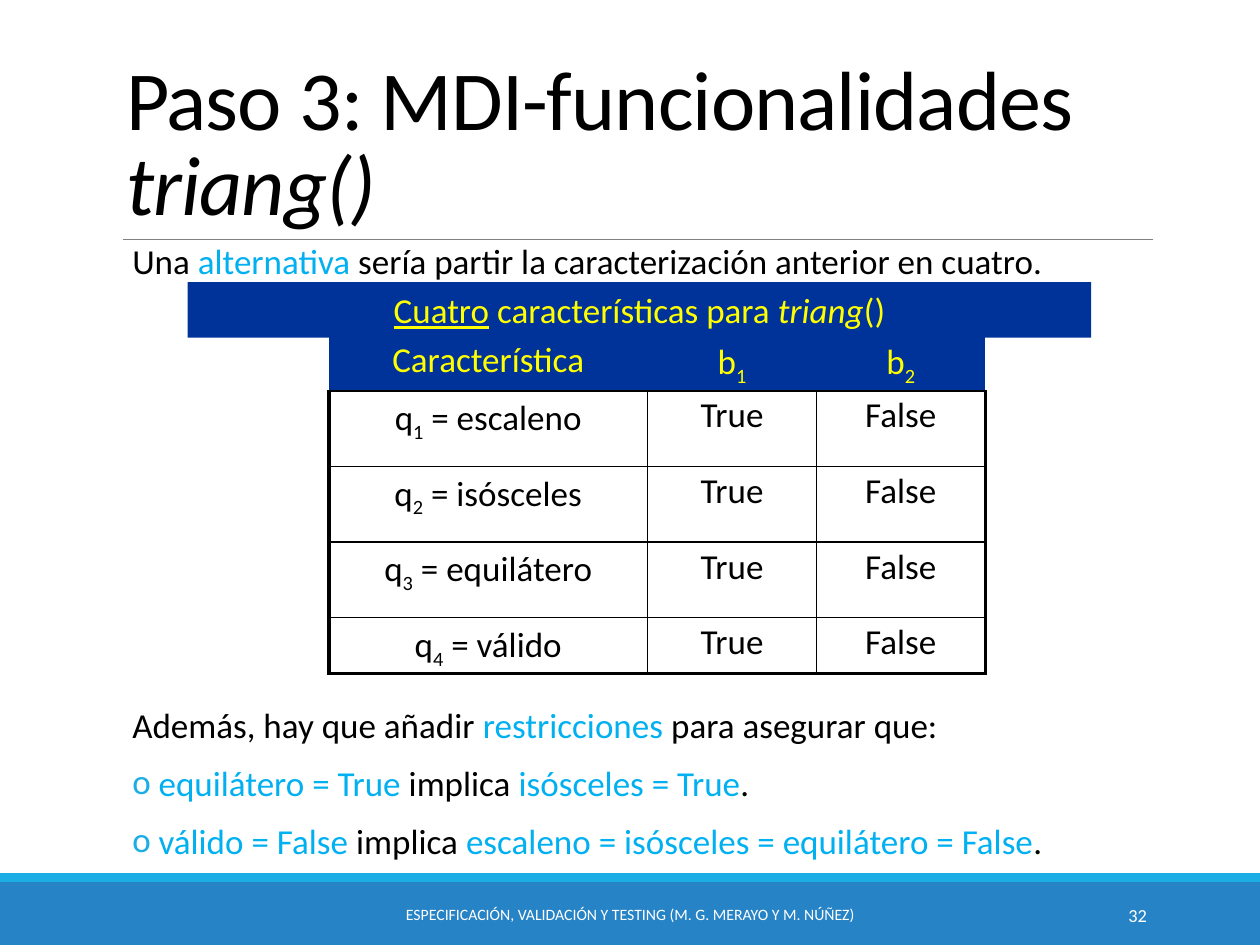
import pptx
import pptx.util
import pptx.dml.color
import pptx.enum.shapes
import pptx.enum.text
import pptx.oxml.ns
import lxml.etree

Inches = pptx.util.Inches
Pt = pptx.util.Pt
ALIGN = pptx.enum.text.PP_ALIGN
ANCHOR = pptx.enum.text.MSO_ANCHOR
RECTANGLE = pptx.enum.shapes.MSO_SHAPE.RECTANGLE

COLORS = {
    "text": "000000",
    "accent": "00B0F0",
    "footer": "2683C6",
    "strip": "1CADE4",
    "rule": "808080",
    "header": "003399",
    "heading": "FFFF00",
    "white": "FFFFFF",
}


def rgb(name):
    return pptx.dml.color.RGBColor.from_string(COLORS[name])


def add_child(parent, tag, **attributes):
    return lxml.etree.SubElement(parent, pptx.oxml.ns.qn(tag), attributes)


def add_span(para, text, color="text", size=20, italic=None, underline=None, sub=False):
    span = para.add_run()
    span.text = text
    span.font.name = "Calibri"
    span.font.size = Pt(size)
    span.font.color.rgb = rgb(color)
    span.font.italic = italic
    span.font.underline = underline
    if sub:
        span.font._element.set("baseline", "-25000")
    return span


def add_textbox(page, box, side=0.1, anchor=ANCHOR.TOP):
    frame = page.shapes.add_textbox(*map(Inches, box)).text_frame
    frame.word_wrap = True
    frame.margin_left = frame.margin_right = Inches(side)
    frame.vertical_anchor = anchor
    return frame


def add_block(page, box, color):
    block = page.shapes.add_shape(RECTANGLE, *map(Inches, box))
    block.shadow.inherit = False
    block.fill.solid()
    block.fill.fore_color.rgb = rgb(color)
    block.line.fill.background()
    return block


def add_title(page, box):
    title = page.shapes.title
    title.left, title.top, title.width, title.height = map(Inches, box)
    frame = title.text_frame
    frame.word_wrap = True
    frame.auto_size = pptx.enum.text.MSO_AUTO_SIZE.NONE
    frame.vertical_anchor = ANCHOR.BOTTOM
    para = frame.paragraphs[0]
    para.alignment = ALIGN.LEFT
    para.line_spacing = 0.85
    for text, italic in [("Paso 3: MDI-funcionalidades ", None), ("triang()", True)]:
        span = add_span(para, text, size=48, italic=italic)
        span.font._element.set("spc", "-50")


def add_rule(page, left, right, top):
    rule = page.shapes.add_connector(
        pptx.enum.shapes.MSO_CONNECTOR.STRAIGHT,
        Inches(left), Inches(top), Inches(right), Inches(top))
    rule.line.color.rgb = rgb("rule")
    rule.line.width = Pt(0.5)
    add_child(rule._element.spPr, "a:effectLst")


def add_bullet(para):
    properties = para._p.get_or_add_pPr()
    properties.set("marL", str(Inches(0.1)))
    properties.set("indent", str(Inches(-0.1)))
    color = add_child(properties, "a:buClr")
    add_child(color, "a:srgbClr", val=COLORS["strip"])
    add_child(properties, "a:buFont", typeface="Calibri")
    add_child(properties, "a:buChar", char="o")


def add_body(page, box, lines):
    frame = add_textbox(page, box, side=0)
    for index, (bulleted, spans) in enumerate(lines):
        para = frame.add_paragraph() if index else frame.paragraphs[0]
        para.line_spacing = 0.8
        para.space_before = Pt(12 if index else 0)
        para.space_after = Pt(2)
        if bulleted:
            add_bullet(para)
        for text, color in spans:
            add_span(para, text, color)


def add_banner(page, box):
    banner = add_block(page, box, "header")
    para = banner.text_frame.paragraphs[0]
    para.alignment = ALIGN.CENTER
    add_span(para, "Cuatro", "heading", underline=True)
    add_span(para, " características para ", "heading")
    add_span(para, "triang", "heading", italic=True)
    add_span(para, "()", "heading")


def set_borders(cell, widths):
    properties = cell._tc.get_or_add_tcPr()
    for side, width in zip("LRTB", widths):
        line = add_child(properties, "a:ln" + side, w=str(Pt(width)))
        if width:
            fill = add_child(line, "a:solidFill")
            add_child(fill, "a:srgbClr", val=COLORS["text"])
        else:
            add_child(line, "a:noFill")


def add_features_table(page, box, column_widths, row_heights):
    names = ["escaleno", "isósceles", "equilátero", "válido"]
    rows = [[("Característica",), ("b", "1"), ("b", "2")]]
    for number, name in enumerate(names, 1):
        rows.append([("q", str(number), " = " + name), ("True",), ("False",)])
    table = page.shapes.add_table(len(rows), 3, *map(Inches, box)).table
    table.first_row = table.horz_banding = False
    for column, width in zip(table.columns, column_widths):
        column.width = Inches(width)
    for row, height in zip(table.rows, row_heights):
        row.height = Inches(height)
    for r, row in enumerate(rows):
        for c, texts in enumerate(row):
            cell = table.cell(r, c)
            if r == 0:
                set_borders(cell, (0, 0, 0, 1))
            else:
                set_borders(cell, (2.25 if c == 0 else 1, 2.25 if c == 2 else 1,
                                   1, 2.25 if r == len(names) else 1))
            cell.fill.solid()
            cell.fill.fore_color.rgb = rgb("white" if r else "header")
            para = cell.text_frame.paragraphs[0]
            para.alignment = ALIGN.CENTER
            para.line_spacing = 0.9
            for index, text in enumerate(texts):
                add_span(para, text, "text" if r else "heading", sub=index == 1)


def add_footer(page, box):
    left, top, width, height = box
    add_block(page, box, "footer")
    add_block(page, (left, top - 0.07, width, 0.07), "strip")
    credit = "ESPECIFICACIÓN, VALIDACIÓN Y TESTING (M. G. MERAYO Y M. NÚÑEZ)"
    for text, x, w, size, align in [(credit, 3.02, 3.96, 9, ALIGN.CENTER),
                                    ("32", 8.12, 1.08, 10.5, ALIGN.RIGHT)]:
        frame = add_textbox(page, (left + x, top + 0.06, w, 0.4), anchor=ANCHOR.MIDDLE)
        frame.paragraphs[0].alignment = align
        add_span(frame.paragraphs[0], text, "white", size)


def main():
    deck = pptx.Presentation()
    deck.slide_width, deck.slide_height = Inches(10), Inches(7.5)
    page = deck.slides.add_slide(deck.slide_layouts[5])
    add_footer(page, (0, 7, 10, 0.5))
    add_rule(page, 0.98, 9.15, 1.9)
    add_title(page, (0.9, 0.31, 8.04, 1.59))
    add_body(page, (1.05, 1.92, 8.33, 0.4), [
        (False, [("Una ", "text"), ("alternativa", "accent"),
                 (" sería partir la caracterización anterior en cuatro.", "text")]),
    ])
    add_body(page, (1.05, 5.6, 8.33, 1.3), [
        (False, [("Además, hay que añadir ", "text"), ("restricciones", "accent"),
                 (" para asegurar que:", "text")]),
        (True, [(" equilátero = True", "accent"), (" implica ", "text"),
                ("isósceles = True", "accent"), (".", "text")]),
        (True, [(" válido = False", "accent"), (" implica ", "text"),
                ("escaleno = isósceles = equilátero = False", "accent"), (".", "text")]),
    ])
    add_banner(page, (1.49, 2.24, 7.17, 0.44))
    add_features_table(page, (2.61, 2.66, 5.2, 2.64),
                       (2.53, 1.34, 1.34), (0.35, 0.6, 0.6, 0.6, 0.44))
    deck.save("out.pptx")


if __name__ == "__main__":
    main()
